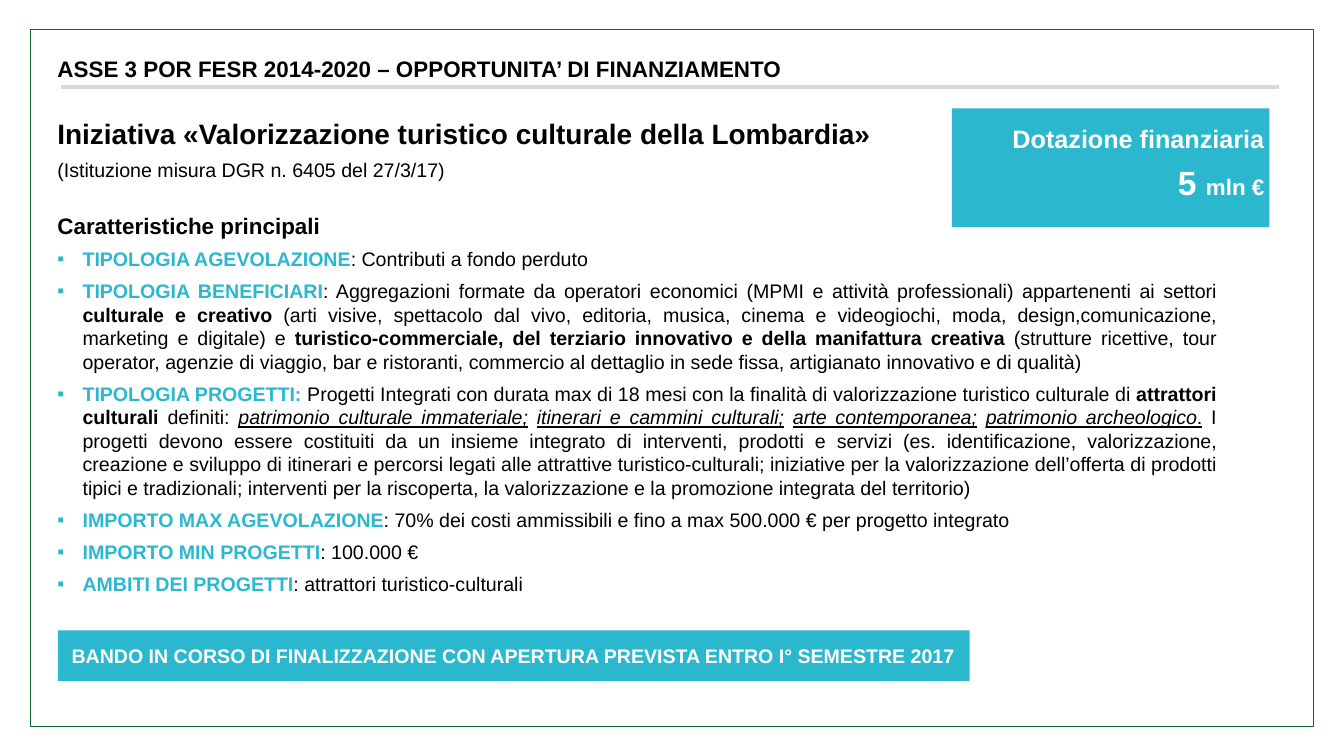
from lxml import etree
from pptx import Presentation
from pptx.dml.color import RGBColor
from pptx.enum.shapes import MSO_CONNECTOR, MSO_SHAPE
from pptx.enum.text import MSO_ANCHOR, MSO_AUTO_SIZE, PP_ALIGN
from pptx.oxml.ns import qn
from pptx.util import Inches, Pt

RECTANGLE, STRAIGHT = MSO_SHAPE.RECTANGLE, MSO_CONNECTOR.STRAIGHT
TOP, MIDDLE = MSO_ANCHOR.TOP, MSO_ANCHOR.MIDDLE
LEFT, RIGHT, JUSTIFY = PP_ALIGN.LEFT, PP_ALIGN.RIGHT, PP_ALIGN.JUSTIFY
NO_AUTOFIT = MSO_AUTO_SIZE.NONE

WIDTH, HEIGHT = Inches(26.67), Inches(15)
FONT = "Arial"
CYAN, BLACK, WHITE, GREY, GREEN = "2BB8CF", "000000", "FFFFFF", "D9D9D9", "086A2E"
PLAIN, BOLD, ITALIC, UNDERLINED = "", "b", "i", "iu"

FEATURES = [
    ("TIPOLOGIA AGEVOLAZIONE", [(": Contributi a fondo perduto", PLAIN)]),
    ("TIPOLOGIA BENEFICIARI", [
        (": Aggregazioni formate da operatori economici (MPMI e attività professionali) "
         "appartenenti ai settori ", PLAIN),
        ("culturale e creativo", BOLD),
        (" (arti visive, spettacolo dal vivo, editoria, musica, cinema e videogiochi, moda, "
         "design,comunicazione, marketing e digitale) e ", PLAIN),
        ("turistico-commerciale, del terziario innovativo e della manifattura creativa", BOLD),
        (" (strutture ricettive, tour operator, agenzie di viaggio, bar e ristoranti, commercio "
         "al dettaglio in sede fissa, artigianato innovativo e di qualità)", PLAIN),
    ]),
    ("TIPOLOGIA PROGETTI: ", [
        ("Progetti Integrati con durata max di 18 mesi con la finalità di valorizzazione "
         "turistico culturale di ", PLAIN),
        ("attrattori culturali", BOLD),
        (" definiti: ", PLAIN),
        ("patrimonio culturale immateriale;", UNDERLINED),
        (" ", ITALIC),
        ("itinerari e cammini culturali;", UNDERLINED),
        (" ", ITALIC),
        ("arte contemporanea;", UNDERLINED),
        (" ", ITALIC),
        ("patrimonio archeologico", UNDERLINED),
        (".", "u"),
        (" I progetti devono essere costituiti da un insieme integrato di interventi, prodotti e "
         "servizi (es. identificazione, valorizzazione, creazione e sviluppo di itinerari e "
         "percorsi legati alle attrattive turistico-culturali; iniziative per la valorizzazione "
         "dell’offerta di prodotti tipici e tradizionali; interventi per la riscoperta, la "
         "valorizzazione e la promozione integrata del territorio)", PLAIN),
    ]),
    ("IMPORTO MAX AGEVOLAZIONE", [
        (": 70% dei costi ammissibili e fino a max 500.000 € per progetto integrato", PLAIN)]),
    ("IMPORTO MIN PROGETTI", [(": 100.000 €", PLAIN)]),
    ("AMBITI DEI PROGETTI", [(": attrattori turistico-culturali", PLAIN)]),
]


def color(value):
    """Turn a hex string into a colour."""
    return RGBColor.from_string(value)


def area(left, top, width, height):
    """Turn percentages of the slide into left, top, width and height."""
    return (int(WIDTH * left / 100), int(HEIGHT * top / 100),
            int(WIDTH * width / 100), int(HEIGHT * height / 100))


def prepare_frame(frame, anchor, left=0.1, top=0.1, right=0.1):
    """Set wrapping, anchor and margins in inches."""
    frame.word_wrap = True
    frame.auto_size = NO_AUTOFIT
    frame.vertical_anchor = anchor
    frame.margin_left, frame.margin_top = Inches(left), Inches(top)
    frame.margin_right, frame.margin_bottom = Inches(right), Inches(0.1)
    return frame


def add_span(para, text, size, ink=BLACK, style=PLAIN):
    """Add one run whose style letters mean bold, italic and underlined."""
    span = para.add_run()
    span.text = text
    font = span.font
    font.name, font.size = FONT, Pt(size)
    font.color.rgb = color(ink)
    font.bold, font.italic, font.underline = "b" in style, "i" in style, "u" in style


def add_para(frame, align=LEFT, before=12):
    """Use the first empty paragraph of a frame, or append one with space before."""
    first = frame.paragraphs[0]
    para = first if not first.runs else frame.add_paragraph()
    para.alignment = align
    para.space_before = Pt(before if first.runs else 0)
    return para


def add_bullet(para):
    """Give a paragraph a hanging square bullet."""
    properties = para._p.get_or_add_pPr()
    properties.set("marL", str(Inches(0.5)))
    properties.set("indent", str(-Inches(0.5)))
    etree.SubElement(properties, qn("a:buFont"), typeface=FONT)
    etree.SubElement(properties, qn("a:buChar"), char="▪")


def add_panel(page, place, fill=None, line=None):
    """Add a rectangle with an optional fill and outline."""
    panel = page.shapes.add_shape(RECTANGLE, *place)
    panel.shadow.inherit = False
    if fill:
        panel.fill.solid()
        panel.fill.fore_color.rgb = color(fill)
    else:
        panel.fill.background()
    if line:
        panel.line.color.rgb = color(line)
        panel.line.width = Pt(1)
    else:
        panel.line.fill.background()
    return panel


def add_rule(page, left, right, top):
    """Add the thick grey rule under the heading."""
    start, level, length, _ = area(left, top, right - left, 0)
    rule = page.shapes.add_connector(STRAIGHT, start, level, start + length, level)
    rule.line.color.rgb = color(GREY)
    rule.line.width = Pt(6)
    etree.SubElement(rule._element.spPr, qn("a:effectLst"))


def fill_title(page):
    """Place and write the slide heading."""
    title = page.shapes.title
    title.left, title.top, title.width, title.height = area(3.9, 6.6, 60, 4.87)
    frame = prepare_frame(title.text_frame, TOP)
    add_span(add_para(frame), "ASSE 3 POR FESR 2014-2020 – OPPORTUNITA’ DI FINANZIAMENTO",
             32, style=BOLD)


def add_initiative(page):
    """Write the initiative and its main features."""
    box = page.shapes.add_textbox(*area(3.9, 14.6, 86.99, 64.93))
    frame = prepare_frame(box.text_frame, MIDDLE)
    add_span(add_para(frame), "Iniziativa «Valorizzazione turistico culturale della Lombardia»",
             40, style=BOLD)
    add_span(add_para(frame), "(Istituzione misura DGR n. 6405 del 27/3/17)", 28)
    add_span(add_para(frame, before=43), "Caratteristiche principali", 32, style=BOLD)
    for label, details in FEATURES:
        para = add_para(frame, JUSTIFY)
        add_bullet(para)
        add_span(para, label, 28, CYAN, BOLD)
        for text, style in details:
            add_span(para, text, 28, style=style)


def add_budget(page):
    """Add the panel with the funds available."""
    panel = add_panel(page, area(70.83, 14.33, 23.62, 15.73), CYAN)
    frame = prepare_frame(panel.text_frame, TOP, top=0.29)
    add_span(add_para(frame, RIGHT), "Dotazione finanziaria", 36, WHITE, BOLD)
    amount = add_para(frame, RIGHT)
    add_span(amount, "5 ", 48, WHITE, BOLD)
    add_span(amount, "mln €", 32, WHITE, BOLD)


def add_banner(page):
    """Add the panel that announces the call."""
    panel = add_panel(page, area(4.31, 83.4, 67.83, 6.67), CYAN)
    frame = prepare_frame(panel.text_frame, MIDDLE, left=0.27)
    add_span(add_para(frame),
             "BANDO IN CORSO DI FINALIZZAZIONE CON APERTURA PREVISTA ENTRO I° SEMESTRE 2017",
             28, WHITE, BOLD)


def main():
    """Build and save the slide."""
    deck = Presentation()
    deck.slide_width, deck.slide_height = WIDTH, HEIGHT
    page = deck.slides.add_slide(deck.slide_layouts[5])
    add_rule(page, 4.57, 95.13, 11.47)
    add_panel(page, area(2.29, 3.87, 95.46, 92.27), line=GREEN)
    fill_title(page)
    add_initiative(page)
    add_budget(page)
    add_banner(page)
    deck.save("out.pptx")


if __name__ == "__main__":
    main()
